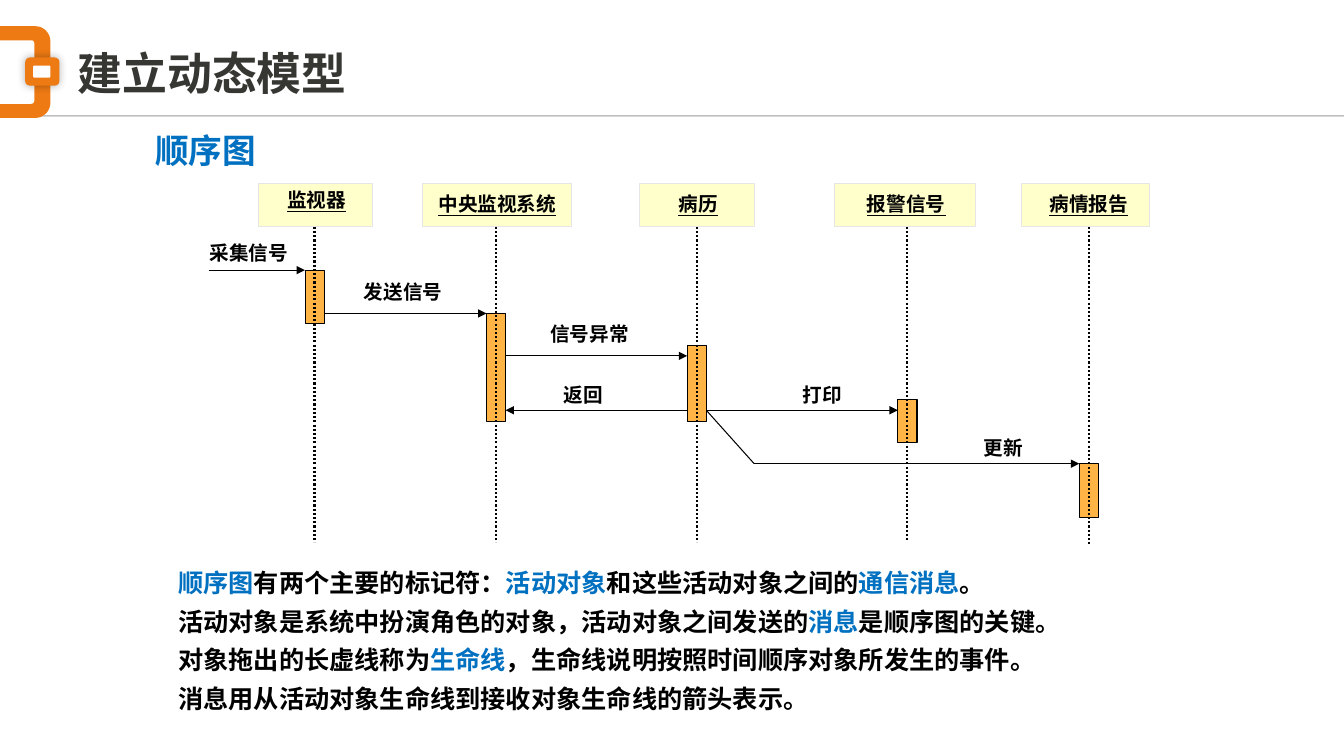
from math import cos, pi, sin
from dataclasses import dataclass
from lxml import etree
from pptx import Presentation
from pptx.dml.color import RGBColor
from pptx.enum.dml import MSO_LINE
from pptx.enum.shapes import MSO_CONNECTOR, MSO_SHAPE
from pptx.enum.text import MSO_ANCHOR, PP_ALIGN
from pptx.oxml.ns import qn
from pptx.util import Inches, Pt

RECT, ROUND = MSO_SHAPE.RECTANGLE, MSO_SHAPE.ROUNDED_RECTANGLE
STRAIGHT, DOTS = MSO_CONNECTOR.STRAIGHT, MSO_LINE.ROUND_DOT
LEFT, TOP, MIDDLE = PP_ALIGN.LEFT, MSO_ANCHOR.TOP, MSO_ANCHOR.MIDDLE


@dataclass(frozen=True)
class Theme:
    """Colours, fonts and type sizes."""
    dark: str = "363632"
    blue: str = "0070C0"
    black: str = "000000"
    white: str = "FFFFFF"
    orange: str = "EE7A13"
    bar: str = "FFB445"
    head: str = "FFFFCC"
    edge: str = "E7E6E6"
    latin: str = "Arial"
    cjk: str = "Noto Sans CJK SC"
    title: int = 32
    sub: int = 24
    body: int = 18
    label: int = 14


T = Theme()
TITLE = "建立动态模型"
SUB = "顺序图"
# name, box left, box width, text left, text top, axis, axis end, bar top, bar height
ACTORS = [
    ("监视器", 2.56, 1.14, 2.75, 1.82, 3.12, 5.38, 2.68, 0.53),
    ("中央监视系统", 4.19, 1.48, 4.25, 1.86, 4.92, 5.38, 3.11, 1.07),
    ("病历", 6.34, 1.14, 6.63, 1.86, 6.91, 5.38, 3.43, 0.75),
    ("报警信号", 8.28, 1.4, 8.5, 1.86, 9, 5.36, 3.96, 0.43),
    ("病情报告", 10.13, 1.27, 10.31, 1.86, 10.8, 5.42, 4.6, 0.53),
]
# text, text left, text top, sender, receiver, arrow height
CALLS = [
    ("采集信号", 1.98, 2.34, None, 0, 2.68),
    ("发送信号", 3.51, 2.73, 0, 1, 3.11),
    ("信号异常", 5.36, 3.14, 1, 2, 3.53),
    ("返回", 5.49, 3.75, 2, 1, 4.07),
    ("打印", 7.86, 3.75, 2, 3, 4.07),
    ("更新", 9.66, 4.28, 2, 4, 4.6),
]
START, BEND, FORK = 2.07, 7.48, 4.07
NOTES = [
    [("顺序图", T.blue), ("有两个主要的标记符：", T.black), ("活动对象", T.blue),
     ("和这些活动对象之间的", T.black), ("通信消息", T.blue), ("。", T.black)],
    [("活动对象是系统中扮演角色的对象，活动对象之间发送的", T.black),
     ("消息", T.blue), ("是顺序图的关键。", T.black)],
    [("对象拖出的长虚线称为", T.black), ("生命线", T.blue),
     ("，生命线说明按照时间顺序对象所发生的事件。", T.black)],
    [("消息用从活动对象生命线到接收对象生命线的箭头表示。", T.black)],
]
HEAD_Y, HEAD_H, BAR_W = 1.82, 0.43, 0.19

prs = Presentation()
prs.slide_width, prs.slide_height = Inches(13.33), Inches(7.5)
slide = prs.slides.add_slide(prs.slide_layouts[5])
shapes = slide.shapes


def rgb(code):
    return RGBColor.from_string(code)


def write(text, x, y, w, h, size=T.label, color=T.black, font=T.latin,
          under=False, anchor=TOP, gap=0, shape=None):
    box = shape or shapes.add_textbox(0, 0, 0, 0)
    box.left, box.top, box.width, box.height = map(Inches, (x, y, w, h))
    frame = box.text_frame
    frame.word_wrap, frame.vertical_anchor = True, anchor
    rows = [[(text, color)]] if isinstance(text, str) else text
    for i, row in enumerate(rows):
        para = frame.add_paragraph() if i else frame.paragraphs[0]
        para.alignment, para.line_spacing = LEFT, Pt(size * 1.2)
        para.space_before = Pt(gap if i else 0)
        for part, tint in row:
            run = para.add_run()
            run.text = part
            run.font.name, run.font.size = font, Pt(size)
            run.font.bold, run.font.underline = True, under
            run.font.color.rgb = rgb(tint)
            asian = etree.SubElement(run.font._element, qn("a:ea"))
            asian.set("typeface", T.cjk)


def paint(shape, fill, line=None):
    shape.shadow.inherit = False
    shape.fill.solid()
    shape.fill.fore_color.rgb = rgb(fill)
    if line:
        shape.line.color.rgb = rgb(line)
        shape.line.width = Pt(0.75)
    else:
        shape.line.fill.background()
    return shape


def block(x, y, w, h, fill, line=None, kind=RECT):
    return paint(shapes.add_shape(kind, *map(Inches, (x, y, w, h))), fill, line)


def rule(x1, y1, x2, y2, color=T.black, width=0.75, dash=None, arrow=False):
    line = shapes.add_connector(STRAIGHT, *map(Inches, (x1, y1, x2, y2)))
    line.line.color.rgb, line.line.width = rgb(color), Pt(width)
    if dash:
        line.line.dash_style = dash
    if arrow:
        etree.SubElement(line.line._get_or_add_ln(), qn("a:tailEnd")).set("type", "triangle")
    etree.SubElement(line._element.spPr, qn("a:effectLst"))
    return line


def tab(w, top, low, r, fill):
    turns = [k * pi / 24 for k in range(13)]
    pts = [(w - r + r * sin(a), top + r - r * cos(a)) for a in turns]
    pts += [(w - r + r * cos(a), low - r + r * sin(a)) for a in turns]
    path = shapes.build_freeform(0, Inches(top))
    path.add_line_segments([(Inches(x), Inches(y)) for x, y in pts + [(0, low)]])
    paint(path.convert_to_shape(), fill)


def crest():
    line = rule(0.25, 1.15, 13.33, 1.15, T.dark, 1)
    tint = line._element.spPr.find(".//" + qn("a:srgbClr"))
    etree.SubElement(tint, qn("a:alpha")).set("val", "31000")
    tab(0.5, 0.26, 1.17, 0.15, T.orange)
    tab(0.34, 0.4, 1.03, 0.03, T.white)
    link = block(0.25, 0.57, 0.34, 0.28, T.orange, kind=ROUND)
    glow = etree.SubElement(link._element.spPr.find(qn("a:effectLst")), qn("a:outerShdw"))
    glow.set("blurRad", str(Pt(6)))
    tint = etree.SubElement(glow, qn("a:srgbClr"), val=T.black)
    etree.SubElement(tint, qn("a:alpha")).set("val", "30000")
    block(0.33, 0.65, 0.17, 0.12, T.white, kind=ROUND).adjustments[0] = 0.1


def chart():
    half = BAR_W / 2
    axes = [actor[5] for actor in ACTORS]
    for name, x, w, tx, ty, *rest in ACTORS:
        block(x, HEAD_Y, w, HEAD_H, T.head, T.edge)
        write(name, tx, ty, 1.41, 0.34, font=T.cjk, under=True)
    for text, x, y, src, dest, level in CALLS:
        write(text, x, y, 1.22, 0.34, font=T.cjk)
        way = -1 if src is not None and src > dest else 1
        begin = START if src is None else axes[src] + way * half
        if level > FORK:
            rule(begin, FORK, BEND, level)
            begin = BEND
        rule(begin, level, axes[dest] - way * half, level, arrow=True)
    for *rest, axis, end, top, tall in ACTORS:
        block(axis - half, top, BAR_W, tall, T.bar, T.black)
        rule(axis, HEAD_Y + HEAD_H, axis, end, width=1.5, dash=DOTS)


def main():
    """Build the sequence diagram slide."""
    crest()
    write(TITLE, 0.67, 0.4, 11.9, 0.64, size=T.title, color=T.dark,
          anchor=MIDDLE, shape=shapes.title)
    write(SUB, 1.44, 1.24, 6.67, 0.5, size=T.sub, color=T.blue)
    chart()
    write(NOTES, 1.67, 5.58, 10.48, 1.57, size=T.body, gap=6)
    prs.save("out.pptx")


if __name__ == "__main__":
    main()
